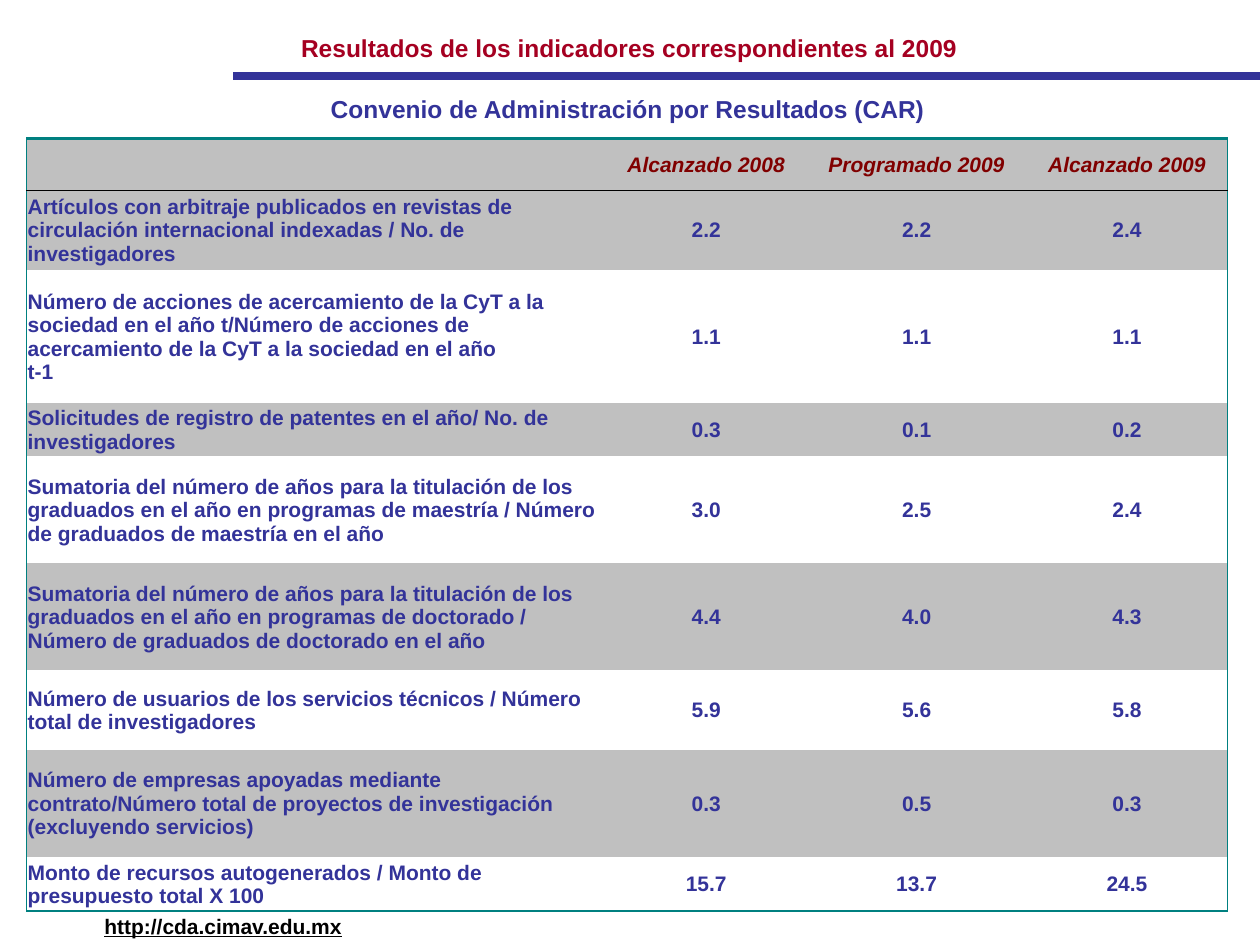
"""Build the slide of 2009 indicator results for the CAR agreement."""
import pptx
import pptx.dml.color
import pptx.enum.shapes
import pptx.enum.text
import pptx.util
from lxml import etree
from pptx.util import Inches

NAVY, TEAL, GREY = "333399", "008080", "C0C0C0"
ALIGN = pptx.enum.text.PP_ALIGN
NS = "{http://schemas.openxmlformats.org/drawingml/2006/main}"


def paint(font, color, size):
    font.name = "Arial"
    font.size = pptx.util.Pt(size)
    font.bold = True
    font.color.rgb = pptx.dml.color.RGBColor.from_string(color)


def edge(cell, side, color, width):
    line = etree.SubElement(cell._tc.get_or_add_tcPr(), NS + "ln" + side)
    if not color:
        etree.SubElement(line, NS + "noFill")
        return
    line.set("w", str(pptx.util.Pt(width)))
    fill = etree.SubElement(line, NS + "solidFill")
    etree.SubElement(fill, NS + "srgbClr", val=color)


deck = pptx.Presentation()
deck.slide_width, deck.slide_height = Inches(10), Inches(7.5)
slide = deck.slides.add_slide(deck.slide_layouts[6])

rule = slide.shapes.add_connector(
    pptx.enum.shapes.MSO_CONNECTOR.STRAIGHT,
    Inches(1.85), Inches(0.6), Inches(10), Inches(0.6))
rule.line.color.rgb = pptx.dml.color.RGBColor.from_string(NAVY)
rule.line.width = pptx.util.Pt(4.5)
etree.SubElement(rule._element.spPr, NS + "effectLst")

labels = [
    ("Resultados de los indicadores correspondientes al 2009",
     (0.27, 0.21, 9.45, 0.34), "A50021", 14, ALIGN.CENTER),
    ("Convenio de Administración por Resultados (CAR) ",
     (0.69, 0.7, 8.64, 0.34), NAVY, 14, ALIGN.CENTER),
    ("http://cda.cimav.edu.mx",
     (0.73, 7.2, 2.1, 0.3), "000000", 12, ALIGN.LEFT),
]
for text, place, color, size, align in labels:
    box = slide.shapes.add_textbox(*[Inches(n) for n in place])
    frame = box.text_frame
    frame.text = text
    frame.word_wrap = align == ALIGN.CENTER
    frame.auto_size = pptx.enum.text.MSO_AUTO_SIZE.SHAPE_TO_FIT_TEXT
    para = frame.paragraphs[0]
    para.alignment = align
    font = para.runs[0].font
    paint(font, color, size)
    if align == ALIGN.LEFT:
        font.underline = True

rows = [
    (0.41, "", "Alcanzado 2008", "Programado 2009", "Alcanzado 2009"),
    (0.63, "Artículos con arbitraje publicados en revistas de circulación "
     "internacional indexadas / No. de investigadores", "2.2", "2.2", "2.4"),
    (1.06, "Número de acciones de acercamiento de la CyT a la sociedad en el "
     "año t/Número de acciones de acercamiento de la CyT a la sociedad en el "
     "año \vt-1", "1.1", "1.1", "1.1"),
    (0.42, "Solicitudes de registro de patentes en el año/ No. de "
     "investigadores", "0.3", "0.1", "0.2"),
    (0.85, "Sumatoria del número de años para la titulación de los graduados "
     "en el año en programas de maestría / Número de graduados de maestría "
     "en el año", "3.0", "2.5", "2.4"),
    (0.85, "Sumatoria del número de años para la titulación de los graduados "
     "en el año en programas de doctorado / Número de graduados de doctorado "
     "en el año", "4.4", "4.0", "4.3"),
    (0.63, "Número de usuarios de los servicios técnicos / Número total de "
     "investigadores", "5.9", "5.6", "5.8"),
    (0.85, "Número de empresas apoyadas mediante contrato/Número total de "
     "proyectos de investigación (excluyendo servicios)",
     "0.3", "0.5", "0.3"),
    (0.43, "Monto de recursos autogenerados / Monto de presupuesto total "
     "X 100", "15.7", "13.7", "24.5"),
]
widths = [4.6, 1.59, 1.75, 1.59]
last = len(rows) - 1
table = slide.shapes.add_table(
    len(rows), len(widths), Inches(0.21), Inches(1.1),
    Inches(9.53), Inches(6.13)).table
table.horz_banding = False
table.first_row = False
for col, width in zip(table.columns, widths):
    col.width = Inches(width)

for r, (height, *texts) in enumerate(rows):
    table.rows[r].height = Inches(height)
    tops = {0: (TEAL, 1.5), 1: ("000000", 0.5)}
    ends = {0: ("000000", 0.5), last: (TEAL, 1.5)}
    for c, text in enumerate(texts):
        cell = table.cell(r, c)
        cell.margin_left = cell.margin_right = cell.margin_top = Inches(0.01)
        cell.margin_bottom = 0
        cell.vertical_anchor = pptx.enum.text.MSO_ANCHOR.MIDDLE
        edge(cell, "L", TEAL if c == 0 else None, 0.5)
        edge(cell, "R", TEAL if c == 3 else None, 0.5)
        edge(cell, "T", *tops.get(r, (None, 0)))
        edge(cell, "B", *ends.get(r, (None, 0)))
        cell.fill.solid()
        shade = GREY if r == 0 or r % 2 else "FFFFFF"
        cell.fill.fore_color.rgb = pptx.dml.color.RGBColor.from_string(shade)
        cell.text_frame.text = text
        para = cell.text_frame.paragraphs[0]
        para.alignment = ALIGN.CENTER if c else ALIGN.LEFT
        for run in para.runs:
            paint(run.font, NAVY if r else "800000", 12)
            run.font.italic = r == 0

deck.save("out.pptx")
